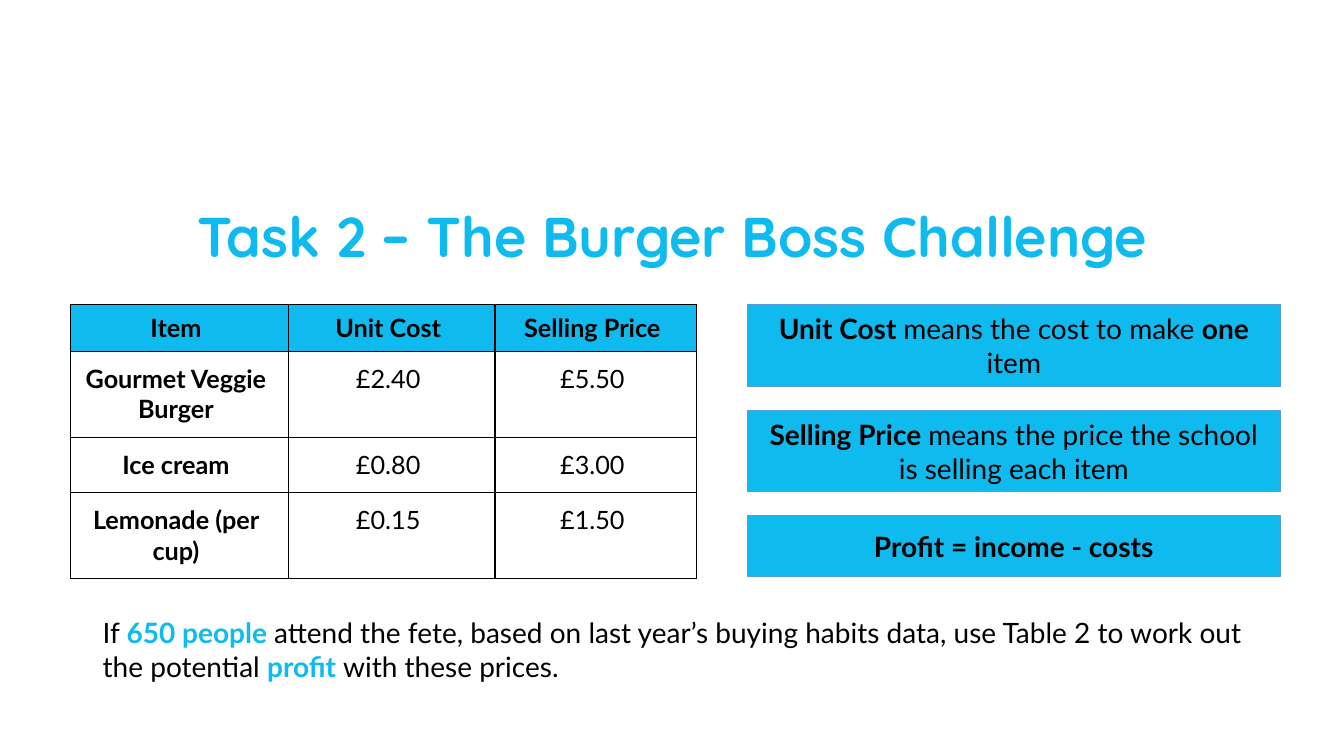
from dataclasses import dataclass

from lxml.etree import SubElement
from pptx import Presentation
from pptx.dml.color import RGBColor
from pptx.enum.shapes import MSO_SHAPE as Shape
from pptx.enum.text import MSO_ANCHOR as Anchor, MSO_AUTO_SIZE as AutoSize, PP_ALIGN as Align
from pptx.oxml.ns import qn
from pptx.util import Emu, Pt

EMU_PER_PX = 9144


@dataclass(frozen=True)
class Theme:
    blue: str = "0FBAEF"
    outline: str = "5B9BD5"
    black: str = "000000"
    heading_font: str = "Quicksand"
    body_font: str = "Lato"
    title_pt: int = 40
    body_pt: int = 20
    table_pt: int = 18


THEME = Theme()


@dataclass(frozen=True)
class Run:
    text: str
    bold: bool = False
    color: str = THEME.black


@dataclass(frozen=True)
class Definition:
    top: int
    height: int
    runs: tuple[Run, ...]


@dataclass(frozen=True)
class PriceRow:
    height: int
    pad: int
    cells: tuple[str, str, str]
    header: bool = False


DEFINITIONS = (
    Definition(302, 81, (
        Run("Unit Cost ", True), Run("means the cost to make "), Run("one", True), Run(" item"))),
    Definition(407, 81, (
        Run("Selling Price ", True), Run("means the price the school is selling each item"))),
    Definition(511, 61, (Run("Profit = income - costs", True),)),
)

PRICES = (
    PriceRow(47, 8, ("Item", "Unit Cost", "Selling Price"), header=True),
    PriceRow(85, 12, ("Gourmet Veggie Burger", "£2.40", "£5.50")),
    PriceRow(55, 12, ("Ice cream", "£0.80", "£3.00")),
    PriceRow(85, 12, ("Lemonade (per cup)", "£0.15", "£1.50")),
)
COLUMN_WIDTHS = (216, 205, 200)

QUESTION = (
    Run("If "),
    Run("650 people ", True, THEME.blue),
    Run("attend the fete, based on last year’s buying habits data, "
        "use Table 2 to work out the potential "),
    Run("profit ", True, THEME.blue),
    Run("with these prices."),
)


def px(n: int) -> Emu:
    return Emu(n * EMU_PER_PX)


def box(left: int, top: int, width: int, height: int) -> tuple[Emu, ...]:
    return px(left), px(top), px(width), px(height)


def write(tf, runs: tuple[Run, ...], size: int,
          align: Align = Align.CENTER, font: str = THEME.body_font) -> None:
    tf.word_wrap = True
    p = tf.paragraphs[0]
    p.alignment = align
    for run in runs:
        r = p.add_run()
        r.text = run.text
        r.font.name = font
        r.font.size = Pt(size)
        r.font.bold = run.bold
        r.font.color.rgb = RGBColor.from_string(run.color)


def add_title(s) -> None:
    title = s.shapes.title
    title.left, title.top, title.width, title.height = box(92, 205, 1150, 65)
    tf = title.text_frame
    tf.auto_size = AutoSize.NONE
    tf.vertical_anchor = Anchor.MIDDLE
    write(tf, (Run("Task 2 – The Burger Boss Challenge", True, THEME.blue),),
          THEME.title_pt, font=THEME.heading_font)
    tf.paragraphs[0].line_spacing = 0.9


def add_borders(cell) -> None:
    tc_pr = cell._tc.get_or_add_tcPr()
    for side in ("a:lnL", "a:lnR", "a:lnT", "a:lnB"):
        ln = SubElement(tc_pr, qn(side), w=str(Pt(1)))
        fill = SubElement(ln, qn("a:solidFill"))
        SubElement(fill, qn("a:srgbClr"), val=THEME.black)


def add_prices(s) -> None:
    frame = s.shapes.add_table(
        len(PRICES), len(COLUMN_WIDTHS),
        *box(70, 302, sum(COLUMN_WIDTHS), sum(row.height for row in PRICES)))
    table = frame.table
    table.first_row = table.horz_banding = False
    for column, width in zip(table.columns, COLUMN_WIDTHS):
        column.width = px(width)
    for i, row in enumerate(PRICES):
        table.rows[i].height = px(row.height)
        for j, text in enumerate(row.cells):
            cell = table.cell(i, j)
            cell.margin_left, cell.margin_right = px(10), px(17)
            cell.margin_top = cell.margin_bottom = px(row.pad)
            add_borders(cell)
            if row.header:
                cell.fill.solid()
                cell.fill.fore_color.rgb = RGBColor.from_string(THEME.blue)
            else:
                cell.fill.background()
            write(cell.text_frame, (Run(text, row.header or j == 0),), THEME.table_pt)


def add_definition(s, item: Definition) -> None:
    sp = s.shapes.add_shape(Shape.RECTANGLE, *box(741, item.top, 529, item.height))
    sp.shadow.inherit = False
    sp.fill.solid()
    sp.fill.fore_color.rgb = RGBColor.from_string(THEME.blue)
    sp.line.color.rgb = RGBColor.from_string(THEME.outline)
    sp.line.width = Pt(0.5)
    sp.text_frame.vertical_anchor = Anchor.MIDDLE
    write(sp.text_frame, item.runs, THEME.body_pt)


def add_question(s) -> None:
    sp = s.shapes.add_textbox(*box(92, 606, 1179, 77))
    sp.text_frame.auto_size = AutoSize.SHAPE_TO_FIT_TEXT
    write(sp.text_frame, QUESTION, THEME.body_pt, Align.LEFT)


def main() -> None:
    prs = Presentation()
    prs.slide_width, prs.slide_height = px(1333), px(750)
    s = prs.slides.add_slide(prs.slide_layouts.get_by_name("Title Only"))
    add_title(s)
    add_prices(s)
    add_question(s)
    for item in DEFINITIONS:
        add_definition(s, item)
    prs.save("out.pptx")


if __name__ == "__main__":
    main()
